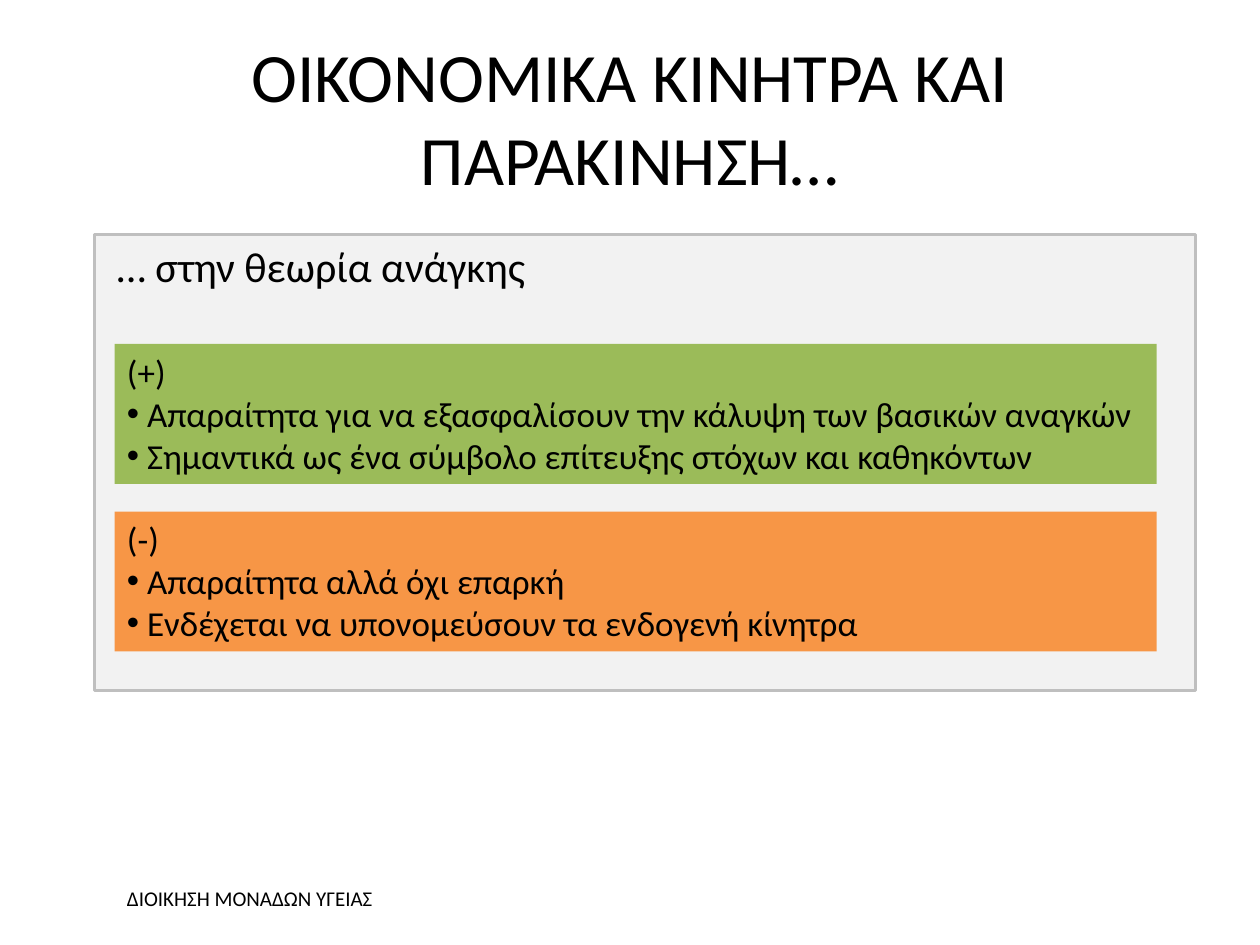
from lxml import etree
from pptx import Presentation
from pptx import util as u
from pptx.dml.color import RGBColor
from pptx.enum import shapes, text
from pptx.oxml.ns import qn

BLACK = RGBColor(0x00, 0x00, 0x00)
PANEL_GREY = RGBColor(0xF2, 0xF2, 0xF2)
BORDER_GREY = RGBColor(0xBF, 0xBF, 0xBF)
GREEN = RGBColor(0x9B, 0xBB, 0x59)
ORANGE = RGBColor(0xF7, 0x96, 0x46)

COLUMNS, ROWS = 100, 75
BULLET_INDENT = u.Inches(0.16)


def add_bullet(paragraph):
    """Give the paragraph a hanging round bullet."""
    properties = paragraph._p.get_or_add_pPr()
    properties.set("marL", str(BULLET_INDENT))
    properties.set("indent", str(-BULLET_INDENT))
    etree.SubElement(properties, qn("a:buFont")).set("typeface", "Arial")
    etree.SubElement(properties, qn("a:buChar")).set("char", "•")


def write(frame, lines, size, font="Calibri", color=BLACK, bullets_from=None,
          align=text.PP_ALIGN.LEFT, anchor=text.MSO_ANCHOR.TOP):
    """Fill a text frame; lines from index bullets_from on get a bullet."""
    frame.word_wrap = True
    frame.vertical_anchor = anchor
    for index, line in enumerate(lines):
        paragraph = frame.paragraphs[0] if index == 0 else frame.add_paragraph()
        if bullets_from is not None and index >= bullets_from:
            add_bullet(paragraph)
        paragraph.alignment = align
        run = paragraph.add_run()
        run.text = line
        run.font.name = font
        run.font.size = u.Pt(size)
        run.font.color.rgb = color


class SlideBuilder:
    """Places elements on a grid of COLUMNS by ROWS."""

    def __init__(self, deck):
        self.column = deck.slide_width / COLUMNS
        self.row = deck.slide_height / ROWS
        self.slide = deck.slides.add_slide(deck.slide_layouts[6])

    def place(self, left, top, width, height):
        return (u.Emu(round(left * self.column)), u.Emu(round(top * self.row)),
                u.Emu(round(width * self.column)), u.Emu(round(height * self.row)))

    def label(self, box, line, size, **style):
        label = self.slide.shapes.add_textbox(*self.place(*box))
        write(label.text_frame, [line], size, **style)

    def rectangle(self, box, fill, border=None, border_width=2):
        rectangle = self.slide.shapes.add_shape(
            shapes.MSO_SHAPE.RECTANGLE, *self.place(*box))
        rectangle.shadow.inherit = False
        rectangle.fill.solid()
        rectangle.fill.fore_color.rgb = fill
        if border is None:
            rectangle.line.fill.background()
        else:
            rectangle.line.color.rgb = border
            rectangle.line.width = u.Pt(border_width)
        return rectangle

    def argument(self, box, fill, sign, points):
        block = self.rectangle(box, fill)
        write(block.text_frame, [sign, *points], 20, bullets_from=1)


def main():
    deck = Presentation()
    deck.slide_width, deck.slide_height = u.Inches(10), u.Inches(7.5)
    builder = SlideBuilder(deck)

    # Panel behind the arguments
    builder.rectangle((7.5, 18.6, 87.4, 36.2), PANEL_GREY, BORDER_GREY)

    # Footer, title and panel heading
    builder.label((9.1, 69.8, 78, 3), "ΔΙΟΙΚΗΣΗ ΜΟΝΑΔΩΝ ΥΓΕΙΑΣ", 12)
    builder.label((5, 3, 90, 12.5), "ΟΙΚΟΝΟΜΙΚΑ ΚΙΝΗΤΡΑ ΚΑΙ ΠΑΡΑΚΙΝΗΣΗ…", 39.6,
                  align=text.PP_ALIGN.CENTER, anchor=text.MSO_ANCHOR.MIDDLE)
    builder.label((8.3, 18.6, 35.4, 5), "… στην θεωρία ανάγκης", 24)

    # Arguments for and against
    arguments = [
        (GREEN, "(+)", ["Απαραίτητα για να εξασφαλίσουν την κάλυψη των βασικών αναγκών",
                        "Σημαντικά ως ένα σύμβολο επίτευξης στόχων και καθηκόντων"]),
        (ORANGE, "(-)", ["Απαραίτητα αλλά όχι επαρκή",
                         "Ενδέχεται να υπονομεύσουν τα ενδογενή κίνητρα"]),
    ]
    for index, (fill, sign, points) in enumerate(arguments):
        builder.argument((9.1, 27.3 + 13.3 * index, 82.7, 11.1), fill, sign, points)

    deck.save("out.pptx")


if __name__ == "__main__":
    main()
